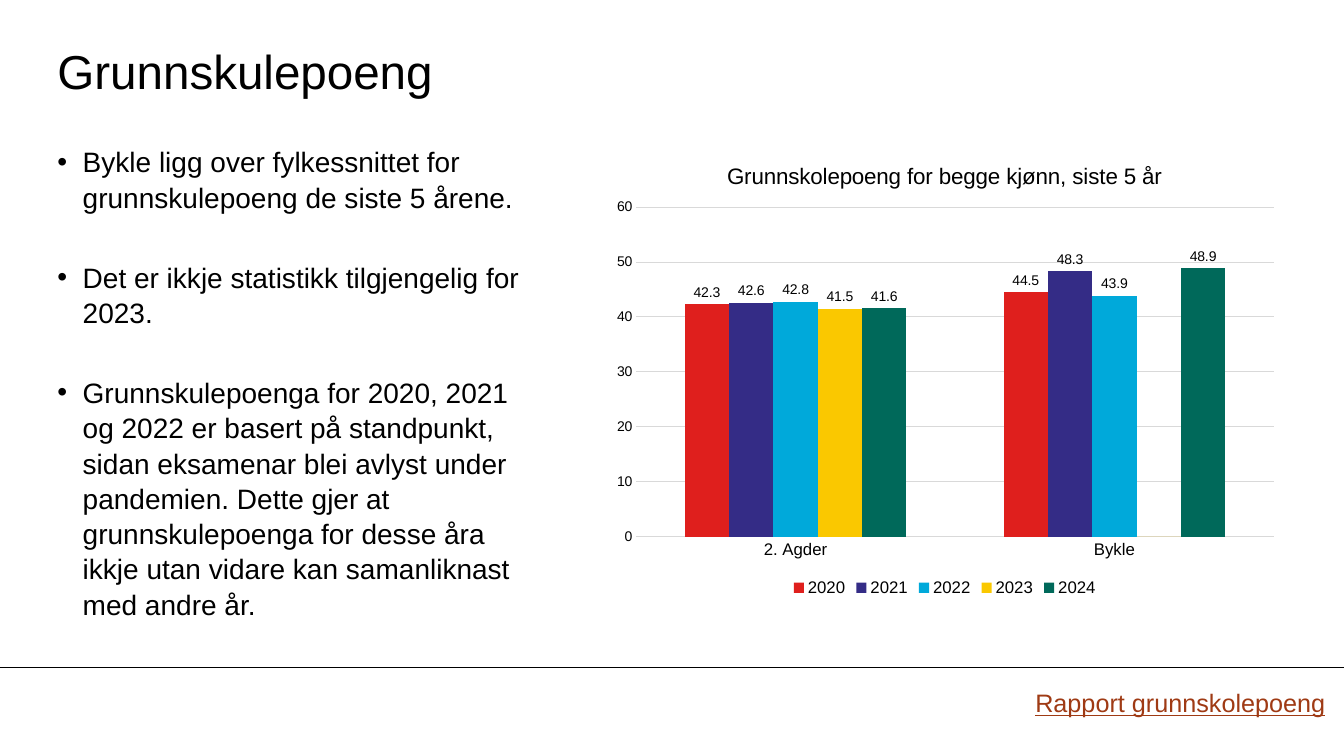
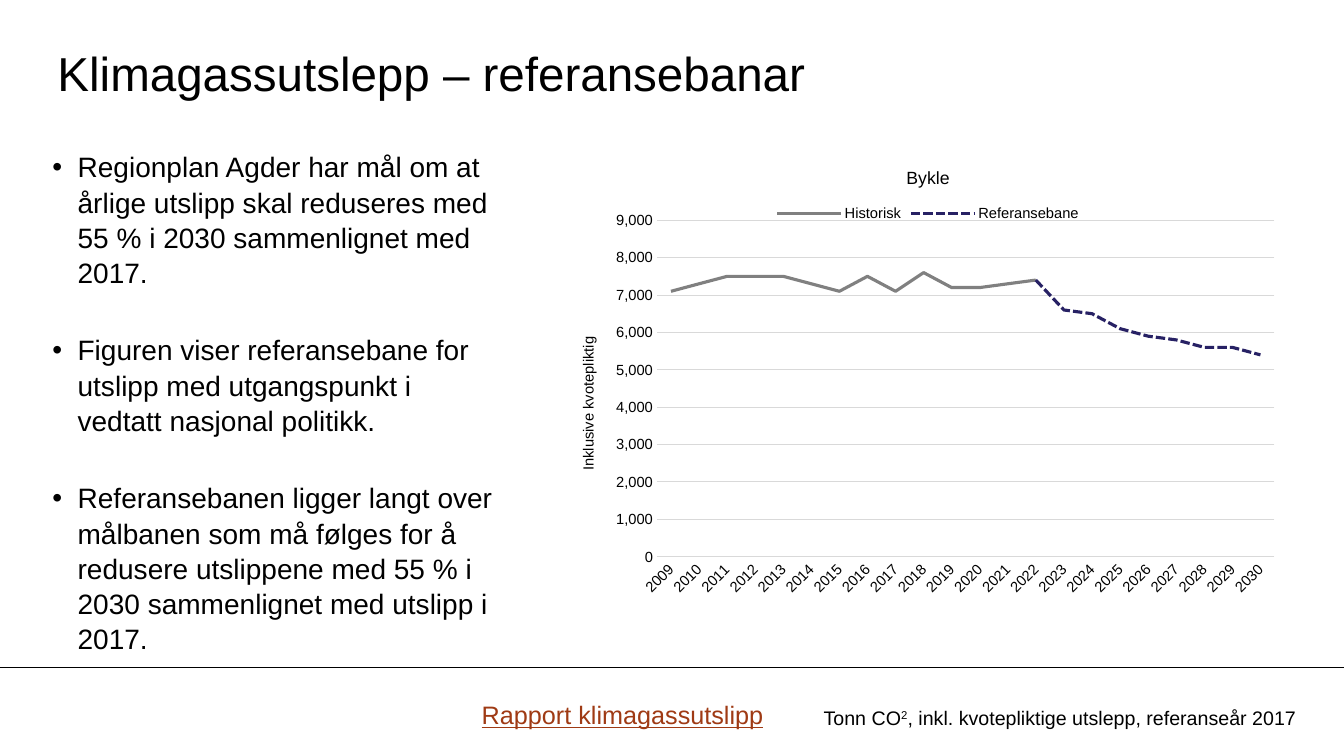
from lxml import etree
from pptx import Presentation
from pptx.chart.data import CategoryChartData
from pptx.dml.color import RGBColor
from pptx.enum.chart import XL_CHART_TYPE, XL_LABEL_POSITION, XL_LEGEND_POSITION, XL_TICK_MARK
from pptx.enum.dml import MSO_LINE
from pptx.enum.shapes import MSO_CONNECTOR
from pptx.enum.text import MSO_ANCHOR
from pptx.oxml import parse_xml
from pptx.oxml.ns import nsdecls, qn
from pptx.util import Inches, Pt

COLUMNS, LINES = XL_CHART_TYPE.COLUMN_CLUSTERED, XL_CHART_TYPE.LINE
BOTTOM, TOP = XL_LEGEND_POSITION.BOTTOM, XL_LEGEND_POSITION.TOP
NO_TICK = XL_TICK_MARK.NONE
OUTSIDE = XL_LABEL_POSITION.OUTSIDE_END
MIDDLE = MSO_ANCHOR.MIDDLE
DASH = MSO_LINE.SQUARE_DOT

BLACK = RGBColor(0x00, 0x00, 0x00)
GRID = RGBColor(0xD9, 0xD9, 0xD9)
LINK = RGBColor(0x9F, 0x3A, 0x14)
HISTORY = RGBColor(0x80, 0x80, 0x80)
REFERENCE = RGBColor(0x27, 0x21, 0x64)
YEAR_COLOURS = [RGBColor(0xDF, 0x1F, 0x1D), RGBColor(0x34, 0x2C, 0x86), RGBColor(0x00, 0xA9, 0xDA),
                RGBColor(0xFA, 0xC8, 0x00), RGBColor(0x00, 0x69, 0x5A)]
FONT = "Arial"
WIDTH, HEIGHT = 13.33, 7.5
RULE_Y = 6.62

PAGES = [
    {
        "title": "Grunnskulepoeng", "title_top": 0.32,
        "body_at": (0.57, 1.42, 4.72, 4.92), "gap": 32,
        "bullets": [
            "Bykle ligg over fylkessnittet for grunnskulepoeng de siste 5 årene.",
            "Det er ikkje statistikk tilgjengelig for 2023.",
            "Grunnskulepoenga for 2020, 2021 og 2022 er basert på standpunkt, sidan eksamenar "
            "blei avlyst under pandemien. Dette gjer at grunnskulepoenga for desse åra ikkje "
            "utan vidare kan samanliknast med andre år.",
        ],
        "link": "Rapport grunnskolepoeng", "link_at": (10.17, 6.77, 3.3, 0.4),
        "chart": {
            "kind": COLUMNS, "at": (5.97, 1.42, 6.8, 4.54), "plot": (0.05, 0.14, 0.93, 0.72),
            "title": "Grunnskolepoeng for begge kjønn, siste 5 år", "title_size": 16,
            "size": 10, "category_size": 12, "legend": BOTTOM,
            "maximum": 60, "step": 10, "format": "0",
            "categories": ["2. Agder", "Bykle"],
            "series": {"2020": (42.3, 44.5), "2021": (42.6, 48.3), "2022": (42.8, 43.9),
                       "2023": (41.5, 0), "2024": (41.6, 48.9)},
        },
    },
    {
        "title": "Klimagassutslepp – referansebanar", "title_top": 0.34,
        "body_at": (0.52, 1.47, 4.42, 4.92), "gap": 30,
        "bullets": [
            "Regionplan Agder har mål om at årlige utslipp skal reduseres med 55 % i 2030 "
            "sammenlignet med 2017.",
            "Figuren viser referansebane for utslipp med utgangspunkt i vedtatt nasjonal politikk.",
            "Referansebanen ligger langt over målbanen som må følges for å redusere utslippene "
            "med 55 % i 2030 sammenlignet med utslipp i 2017.",
        ],
        "link": "Rapport klimagassutslipp", "link_at": (4.68, 6.89, 3.16, 0.4),
        "chart": {
            "kind": LINES, "at": (5.47, 1.47, 7.47, 4.77), "plot": (0.14, 0.15, 0.82, 0.7),
            "title": "Bykle", "title_size": 12.6,
            "size": 10.5, "category_size": 10.5, "legend": TOP,
            "maximum": 9000, "step": 1000, "format": "#,##0",
            "categories": [str(year) for year in range(2009, 2031)],
            "series": {
                "Historisk": [7100, 7300, 7500, 7500, 7500, 7300, 7100, 7500, 7100, 7600, 7200,
                              7200, 7300, 7400] + [None] * 8,
                "Referansebane": [None] * 13 + [7400, 6600, 6500, 6100, 5900, 5800, 5600, 5600,
                                                5400],
            },
        },
    },
]


def add_text(slide, at, paragraphs, size, colour=BLACK, inset=True):
    """Add a text box; each paragraph is a list of runs. Returns its text frame."""
    frame = slide.shapes.add_textbox(*map(Inches, at)).text_frame
    frame.word_wrap = True
    if not inset:
        for side in ("left", "right", "top", "bottom"):
            setattr(frame, f"margin_{side}", 0)
    for index, runs in enumerate(paragraphs):
        paragraph = frame.add_paragraph() if index else frame.paragraphs[0]
        for text in runs:
            run = paragraph.add_run()
            run.text = text
            style = {"name": FONT, "size": Pt(size)}
            for key, value in style.items():
                setattr(run.font, key, value)
            run.font.color.rgb = colour
    return frame


def add_chart(slide, data):
    """Add a chart with the fonts, axes, legend and plot area common to both slides."""
    chart_data = CategoryChartData()
    chart_data.categories = data["categories"]
    for name, values in data["series"].items():
        chart_data.add_series(name, values)
    chart = slide.shapes.add_chart(data["kind"], *map(Inches, data["at"]), chart_data).chart
    values, categories = chart.value_axis, chart.category_axis

    chart.has_title = True
    heading = chart.chart_title.text_frame
    heading.text = data["title"]
    chart.chart_title.include_in_layout = False
    chart.has_legend = True
    chart.legend.position = data["legend"]
    chart.legend.include_in_layout = False
    fonts = [(chart.font, data["size"]), (heading.paragraphs[0].runs[0].font, data["title_size"]),
             (values.tick_labels.font, data["size"]),
             (categories.tick_labels.font, data["category_size"]),
             (chart.legend.font, data["category_size"])]
    for font, size in fonts:
        font.name, font.size, font.bold = FONT, Pt(size), False
        font.color.rgb = BLACK

    axis_settings = {"minimum_scale": 0, "maximum_scale": data["maximum"],
                     "major_unit": data["step"], "has_major_gridlines": True}
    for key, value in axis_settings.items():
        setattr(values, key, value)
    values.tick_labels.number_format = data["format"]
    values.tick_labels.number_format_is_linked = False
    values.format.line.fill.background()
    for line in (values.major_gridlines.format.line, categories.format.line):
        line.color.rgb = GRID
        line.width = Pt(0.75)
    for axis in (values, categories):
        axis.major_tick_mark = axis.minor_tick_mark = NO_TICK

    plot_area = chart.plots[0]._element.getparent()
    for old in plot_area.findall(qn("c:layout")):
        plot_area.remove(old)
    layout = parse_xml(f"<c:layout {nsdecls('c')}><c:manualLayout/></c:layout>")
    settings = {"layoutTarget": "inner", "xMode": "edge", "yMode": "edge",
                **dict(zip("xywh", data["plot"]))}
    for tag, value in settings.items():
        etree.SubElement(layout[0], qn(f"c:{tag}")).set("val", str(value))
    plot_area.insert(0, layout)
    return chart


presentation = Presentation()
presentation.slide_width, presentation.slide_height = Inches(WIDTH), Inches(HEIGHT)
slides, charts = [], []

for page in PAGES:
    slide = presentation.slides.add_slide(presentation.slide_layouts[6])
    rule = slide.shapes.add_connector(MSO_CONNECTOR.STRAIGHT, 0, Inches(RULE_Y),
                                      Inches(WIDTH), Inches(RULE_Y))
    rule.line.color.rgb = BLACK
    rule.line.width = Pt(0.75)
    etree.SubElement(rule._element.spPr, qn("a:effectLst"))

    title = add_text(slide, (0.57, page["title_top"], 11.1, 0.75), [[page["title"]]], 34,
                     inset=False)
    title.vertical_anchor = MIDDLE

    body = add_text(slide, page["body_at"], [[text] for text in page["bullets"]], 20, inset=False)
    for index, paragraph in enumerate(body.paragraphs):
        properties = paragraph._p.get_or_add_pPr()
        properties.set("marL", str(Inches(0.25)))
        properties.set("indent", str(-Inches(0.25)))
        etree.SubElement(properties, qn("a:buFont")).set("typeface", FONT)
        etree.SubElement(properties, qn("a:buChar")).set("char", "•")
        paragraph.line_spacing = 1.05
        if index:
            paragraph.space_before = Pt(page["gap"])

    link = add_text(slide, page["link_at"], [[page["link"]]], 18, LINK)
    link.paragraphs[0].runs[0].font.underline = True
    slides.append(slide)
    charts.append(add_chart(slide, page["chart"]))

school_chart, climate_chart = charts

columns = school_chart.plots[0]
columns.gap_width, columns.overlap = 219, 0
columns.vary_by_categories = False
for series, colour in zip(columns.series, YEAR_COLOURS):
    series.format.fill.solid()
    series.format.fill.fore_color.rgb = colour
    labels = series.data_labels
    label_settings = {"show_value": True, "position": OUTSIDE, "number_format": "0.0;;",
                      "number_format_is_linked": False}
    for key, value in label_settings.items():
        setattr(labels, key, value)
    labels.font.name, labels.font.size = FONT, Pt(10)
    labels.font.color.rgb = BLACK

climate_chart.plots[0].vary_by_categories = False
for series, colour in zip(climate_chart.plots[0].series, (HISTORY, REFERENCE)):
    series.smooth = False
    series.format.line.color.rgb = colour
    series.format.line.width = Pt(2.25)
series.format.line.dash_style = DASH

year_axis = climate_chart.category_axis
year_axis._element.find(qn("c:txPr")).find(qn("a:bodyPr")).set("rot", "-2700000")
unit = climate_chart.value_axis.axis_title.text_frame
unit.text = "Inklusive kvotepliktig"
unit._txBody.find(qn("a:bodyPr")).set("rot", "-5400000")
unit_font = unit.paragraphs[0].runs[0].font
unit_font.name, unit_font.size, unit_font.bold = FONT, Pt(10.5), False
unit_font.color.rgb = BLACK

footnote = add_text(slides[1], (8.07, 6.95, 5.09, 0.34),
                    [["Tonn CO", "2", ", inkl. kvotepliktige utslepp, referanseår 2017"]], 14)
footnote.paragraphs[0].runs[1]._r.get_or_add_rPr().set("baseline", "30000")

presentation.save("out.pptx")
